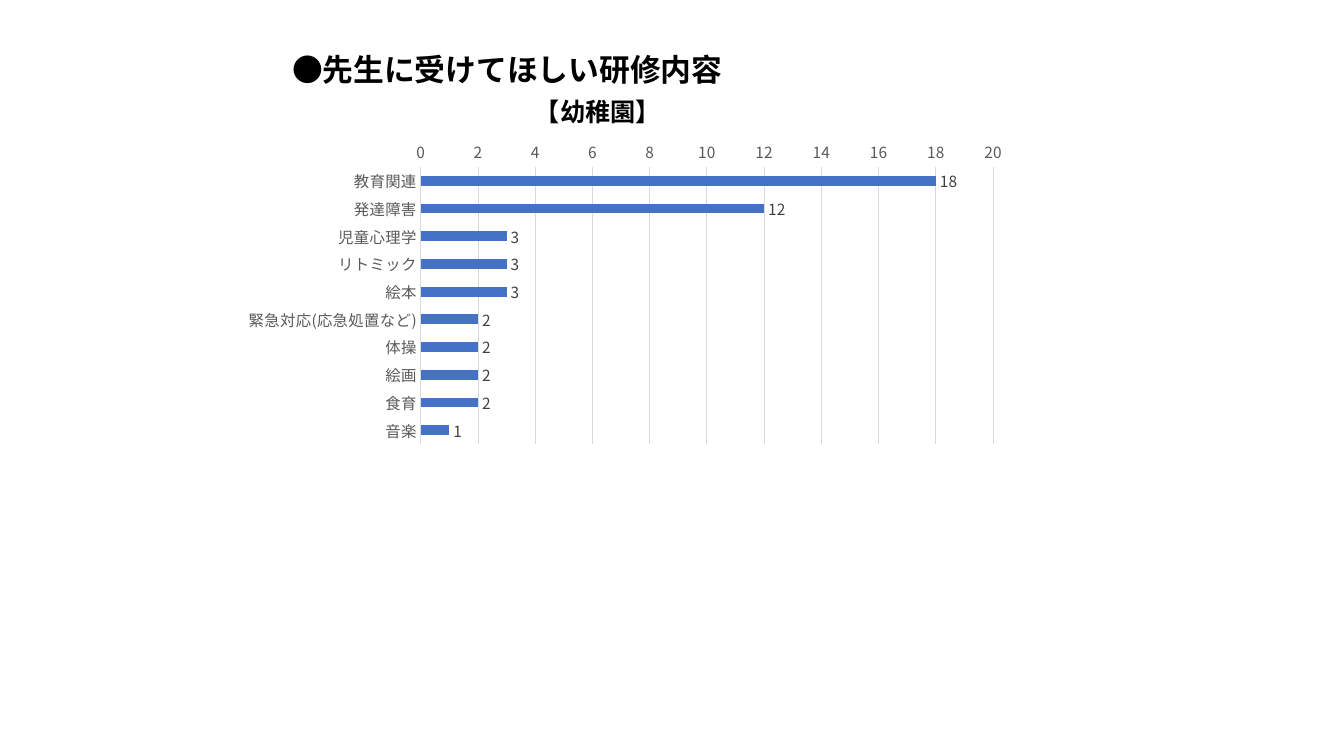
import pptx
import pptx.chart.data
import pptx.dml.color
import pptx.enum.chart
import pptx.enum.text
import pptx.oxml
import pptx.oxml.ns
import pptx.util
from dataclasses import dataclass
from lxml import etree
from pptx.util import Cm, Pt

HEADINGS = [
    ("●先生に受けてほしい研修内容", 22, (7.11, 1.14, 27.56, 1.19)),
    ("【幼稚園】", 18, (13.23, 2.31, 3.71, 1.02)),
]
TRAINING_REQUESTS = {
    "教育関連": 18,
    "発達障害": 12,
    "児童心理学": 3,
    "リトミック": 3,
    "絵本": 3,
    "緊急対応(応急処置など)": 2,
    "体操": 2,
    "絵画": 2,
    "食育": 2,
    "音楽": 1,
}
CHART_BOX = (5.69, 1.75, 21.56, 10.46)
PLOT_AREA = {"x": 0.228, "y": 0.235, "w": 0.669, "h": 0.668}


@dataclass(frozen=True)
class Theme:
    typeface: str = "Noto Sans CJK JP"
    heading: str = "000000"
    axis_text: str = "595959"
    value_text: str = "404040"
    bar: str = "4472C4"
    rule: str = "D9D9D9"
    chart_size: int = 11
    rule_width: float = 0.75


THEME = Theme()


def rgb(code):
    return pptx.dml.color.RGBColor.from_string(code)


def style_font(font, size, color, bold=False):
    font.size = Pt(size)
    font.bold = bold
    font.color.rgb = rgb(color)
    font.name = THEME.typeface
    east_asian = etree.SubElement(font._element, pptx.oxml.ns.qn("a:ea"))
    east_asian.set("typeface", THEME.typeface)


def style_rule(line):
    line.color.rgb = rgb(THEME.rule)
    line.width = Pt(THEME.rule_width)


def add_heading(slide, wording, size, box):
    frame = slide.shapes.add_textbox(*map(Cm, box)).text_frame
    frame.word_wrap = True
    frame.auto_size = pptx.enum.text.MSO_AUTO_SIZE.NONE
    frame.vertical_anchor = pptx.enum.text.MSO_ANCHOR.MIDDLE
    paragraph = frame.paragraphs[0]
    paragraph.text = wording
    style_font(paragraph.font, size, THEME.heading, bold=True)


def place_plot(chart):
    plot_area = chart._chartSpace.chart.plotArea
    for automatic in plot_area.findall(pptx.oxml.ns.qn("c:layout")):
        plot_area.remove(automatic)
    settings = {"layoutTarget": "inner", "xMode": "edge", "yMode": "edge", **PLOT_AREA}
    entries = "".join(f'<c:{name} val="{value}"/>' for name, value in settings.items())
    plot_area.insert(0, pptx.oxml.parse_xml(
        f'<c:layout {pptx.oxml.ns.nsdecls("c")}>'
        f"<c:manualLayout>{entries}</c:manualLayout></c:layout>"))


def add_requests_chart(slide):
    requests = pptx.chart.data.CategoryChartData()
    requests.categories = list(TRAINING_REQUESTS)
    requests.add_series("Series 1", list(TRAINING_REQUESTS.values()))
    chart = slide.shapes.add_chart(
        pptx.enum.chart.XL_CHART_TYPE.BAR_CLUSTERED, *map(Cm, CHART_BOX), requests).chart
    chart.has_legend = False
    chart.has_title = False
    style_font(chart.font, THEME.chart_size, THEME.heading)

    for axis in (chart.category_axis, chart.value_axis):
        axis.major_tick_mark = pptx.enum.chart.XL_TICK_MARK.NONE
        axis.minor_tick_mark = pptx.enum.chart.XL_TICK_MARK.NONE
        style_font(axis.tick_labels.font, THEME.chart_size, THEME.axis_text)
    chart.category_axis.reverse_order = True
    style_rule(chart.category_axis.format.line)
    chart.value_axis.minimum_scale = 0
    chart.value_axis.maximum_scale = 20
    chart.value_axis.major_unit = 2
    chart.value_axis.format.line.fill.background()
    chart.value_axis.has_major_gridlines = True
    style_rule(chart.value_axis.major_gridlines.format.line)

    bars = chart.plots[0]
    bars.gap_width = 182
    bars.vary_by_categories = False
    fill = bars.series[0].format.fill
    fill.solid()
    fill.fore_color.rgb = rgb(THEME.bar)
    bars.has_data_labels = True
    counts = bars.data_labels
    counts.show_value = True
    counts.position = pptx.enum.chart.XL_LABEL_POSITION.OUTSIDE_END
    style_font(counts.font, THEME.chart_size, THEME.value_text)
    place_plot(chart)


def main():
    presentation = pptx.Presentation()
    presentation.slide_width = Cm(33.87)
    presentation.slide_height = Cm(19.05)
    slide = presentation.slides.add_slide(presentation.slide_layouts[6])
    for wording, size, box in HEADINGS:
        add_heading(slide, wording, size, box)
    add_requests_chart(slide)
    presentation.save("out.pptx")


if __name__ == "__main__":
    main()
